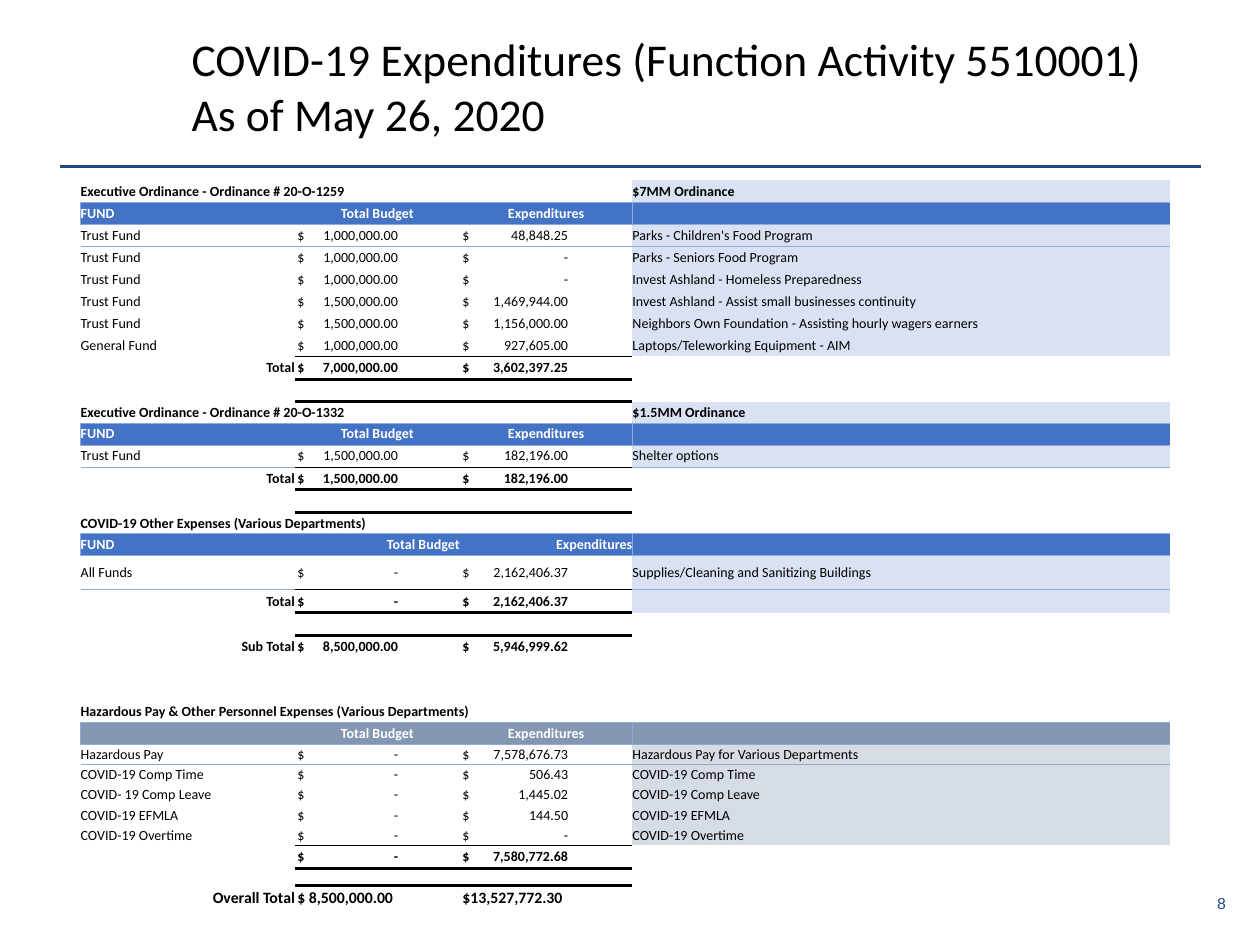
"""Build the COVID-19 expenditures slide with its fund-by-fund table."""
from collections import defaultdict

from lxml.etree import SubElement
from pptx import Presentation
from pptx.dml.color import RGBColor
from pptx.enum.shapes import MSO_CONNECTOR
from pptx.enum.text import MSO_ANCHOR, MSO_AUTO_SIZE, PP_ALIGN
from pptx.oxml.ns import qn
from pptx.util import Inches, Pt


def paint(target, color):
    if hasattr(target, "solid"):
        target.solid()
        target.fore_color.rgb = RGBColor.from_string(color)
    else:
        target.rgb = RGBColor.from_string(color)


def style_text(paragraph, size, color, bold=False, name="Calibri"):
    for run in paragraph.runs:
        run.font.size = Pt(size)
        run.font.name = name
        run.font.bold = bold
        paint(run.font.color, color)


BLACK, WHITE, NAVY, RULE_BLUE = "000000", "FFFFFF", "1F497D", "8EA9DB"
BLUE_SECTION = ("4472C4", "D9E1F2")
SLATE_SECTION = ("8497B0", "D6DCE4")
FUND_HEADER = ("FUND", "Total Budget", "Expenditures", "")
EMPTY = ("", "", "", "")

ROWS = [
    ("heading", 0.175, ("Executive Ordinance - Ordinance # 20-O-1259", "", "", "$7MM Ordinance")),
    ("header", 0.175, FUND_HEADER),
    ("item", 0.175, ("Trust Fund", "1,000,000.00", "48,848.25", "Parks - Children's Food Program")),
    ("item", 0.175, ("Trust Fund", "1,000,000.00", "-", "Parks - Seniors Food Program")),
    ("item", 0.175, ("Trust Fund", "1,000,000.00", "-", "Invest Ashland - Homeless Preparedness")),
    ("item", 0.175, ("Trust Fund", "1,500,000.00", "1,469,944.00",
                     "Invest Ashland - Assist small businesses continuity")),
    ("item", 0.175, ("Trust Fund", "1,500,000.00", "1,156,000.00",
                     "Neighbors Own Foundation - Assisting hourly wagers earners")),
    ("item", 0.175, ("General Fund", "1,000,000.00", "927,605.00", "Laptops/Teleworking Equipment - AIM")),
    ("total", 0.18, ("Total", "7,000,000.00", "3,602,397.25", "")),
    ("gap", 0.18, EMPTY),
    ("heading", 0.17, ("Executive Ordinance - Ordinance # 20-O-1332", "", "", "$1.5MM Ordinance")),
    ("header", 0.175, FUND_HEADER),
    ("item", 0.175, ("Trust Fund", "1,500,000.00", "182,196.00", "Shelter options")),
    ("total", 0.18, ("Total", "1,500,000.00", "182,196.00", "")),
    ("gap", 0.18, EMPTY),
    ("heading", 0.17, ("COVID-19 Other Expenses (Various Departments)", "", "", "")),
    ("header right", 0.175, FUND_HEADER),
    ("item", 0.27, ("All Funds", "-", "2,162,406.37", "Supplies/Cleaning and Sanitizing Buildings")),
    ("total shaded", 0.18, ("Total", "-", "2,162,406.37", "")),
    ("gap", 0.18, EMPTY),
    ("sum", 0.175, ("Sub Total", "8,500,000.00", "5,946,999.62", "")),
    ("gap", 0.175, EMPTY),
    ("gap", 0.175, EMPTY),
    ("heading wide", 0.17, ("Hazardous Pay & Other Personnel Expenses (Various Departments)", "", "", "")),
    ("header", 0.175, ("", "Total Budget", "Expenditures", "")),
    ("item", 0.16, ("Hazardous Pay", "-", "7,578,676.73", "Hazardous Pay for Various Departments")),
    ("item", 0.16, ("COVID-19 Comp Time", "-", "506.43", "COVID-19 Comp Time")),
    ("item", 0.16, ("COVID- 19 Comp Leave", "-", "1,445.02", "COVID-19 Comp Leave")),
    ("item", 0.16, ("COVID-19 EFMLA", "-", "144.50", "COVID-19 EFMLA")),
    ("item", 0.16, ("COVID-19 Overtime", "-", "-", "COVID-19 Overtime")),
    ("total", 0.18, ("", "-", "7,580,772.68", "")),
    ("gap", 0.14, EMPTY),
    ("overall", 0.2, ("Overall Total", "$ 8,500,000.00", "$13,527,772.30", "")),
]

deck = Presentation()
deck.slide_width, deck.slide_height = Inches(10), Inches(7.5)
slide = deck.slides.add_slide(deck.slide_layouts[5])

title = slide.shapes.title
title.left, title.top, title.width, title.height = Inches(1.42), Inches(0.16), Inches(8.08), Inches(1.04)
title.text_frame.text = "COVID-19 Expenditures (Function Activity 5510001)\nAs of May 26, 2020"
title.text_frame.auto_size = MSO_AUTO_SIZE.NONE
title.text_frame.vertical_anchor = MSO_ANCHOR.MIDDLE
for paragraph in title.text_frame.paragraphs:
    paragraph.alignment = PP_ALIGN.LEFT
    style_text(paragraph, 26, BLACK)

divider = slide.shapes.add_connector(
    MSO_CONNECTOR.STRAIGHT, Inches(0.48), Inches(1.32), Inches(9.53), Inches(1.32))
paint(divider.line.color, NAVY)
divider.line.width = Pt(1.5)
SubElement(divider._element.spPr, qn("a:effectLst"))

edges = defaultdict(dict)
for row, (kind, height, texts) in enumerate(ROWS):
    if kind.startswith("header"):
        columns, top, bottom = range(4), (RULE_BLUE, 0.5), (RULE_BLUE, 0.5)
        edges[row, 0]["L"] = edges[row, 2]["R"] = edges[row, 3]["L"] = top
    elif kind.startswith("total"):
        columns, top, bottom = (1, 2), (BLACK, 0.5), (BLACK, 2)
    else:
        continue
    for column in columns:
        edges[row, column].update(T=top, B=bottom)
        edges[row - 1, column]["B"] = top
        edges[row + 1, column]["T"] = bottom

expenditures = slide.shapes.add_table(
    len(ROWS), 4, Inches(0.64), Inches(1.43), Inches(8.65), Inches(5.8)).table
expenditures.first_row = expenditures.horz_banding = False
style_id = expenditures._tbl.tblPr.find(qn("a:tableStyleId"))
style_id.text = "{2D5ABB26-0587-4C30-8999-92F81FD0307C}"
for column, width in enumerate((1.7, 1.31, 1.37, 4.27)):
    expenditures.columns[column].width = Inches(width)

header_fill, note_fill = BLUE_SECTION
amount_tabs = {1: 0.8, 2: 0.84}
for row, (kind, height, texts) in enumerate(ROWS):
    expenditures.rows[row].height = Inches(height)
    is_header = kind.startswith("header")
    has_amounts = kind in ("item", "total", "total shaded", "sum")
    if kind == "heading wide":
        header_fill, note_fill = SLATE_SECTION
    for column, text in enumerate(texts):
        cell = expenditures.cell(row, column)
        cell.margin_left = cell.margin_right = cell.margin_top = cell.margin_bottom = 0
        cell.vertical_anchor = MSO_ANCHOR.MIDDLE
        properties = cell._tc.get_or_add_tcPr()
        for side in "LRTB":
            if side in edges[row, column]:
                color, width = edges[row, column][side]
                border = SubElement(properties, qn(f"a:ln{side}"), w=str(Pt(width)))
                SubElement(SubElement(border, qn("a:solidFill")), qn("a:srgbClr"), val=color)
        shaded = column == 3 and (kind in ("item", "total shaded") or kind == "heading" and text)
        if is_header:
            paint(cell.fill, header_fill)
        elif shaded:
            paint(cell.fill, note_fill)
        else:
            cell.fill.background()

        paragraph = cell.text_frame.paragraphs[0]
        if not text:
            SubElement(paragraph._p, qn("a:endParaRPr"), sz="800")
            continue
        if column in amount_tabs and not is_header:
            cell.margin_left = Inches(0.02)
            if has_amounts:
                tabs = SubElement(paragraph._p.get_or_add_pPr(), qn("a:tabLst"))
                SubElement(tabs, qn("a:tab"), pos=str(Inches(amount_tabs[column])), algn="r")
                text = f"$\t{text}"
        paragraph.text = text
        if is_header and column:
            paragraph.alignment = PP_ALIGN.RIGHT if kind == "header right" else PP_ALIGN.CENTER
        elif column == 0 and kind in ("total", "total shaded", "sum", "overall"):
            paragraph.alignment = PP_ALIGN.RIGHT
        style_text(paragraph, 9 if kind == "overall" else 8, WHITE if is_header else BLACK, kind != "item")
    if kind.startswith("heading"):
        last_column = 3 if kind == "heading wide" else 2
        expenditures.cell(row, 0).merge(expenditures.cell(row, last_column))

page_number = slide.shapes.add_textbox(Inches(9.57), Inches(7.05), Inches(0.33), Inches(0.24)).text_frame
page_number.margin_top = page_number.margin_bottom = Inches(0.04)
page_number.margin_left = page_number.margin_right = Inches(0.09)
page_number.word_wrap = False
page_number.text = "8"
style_text(page_number.paragraphs[0], 9, NAVY, name="Arial")

deck.save("out.pptx")
